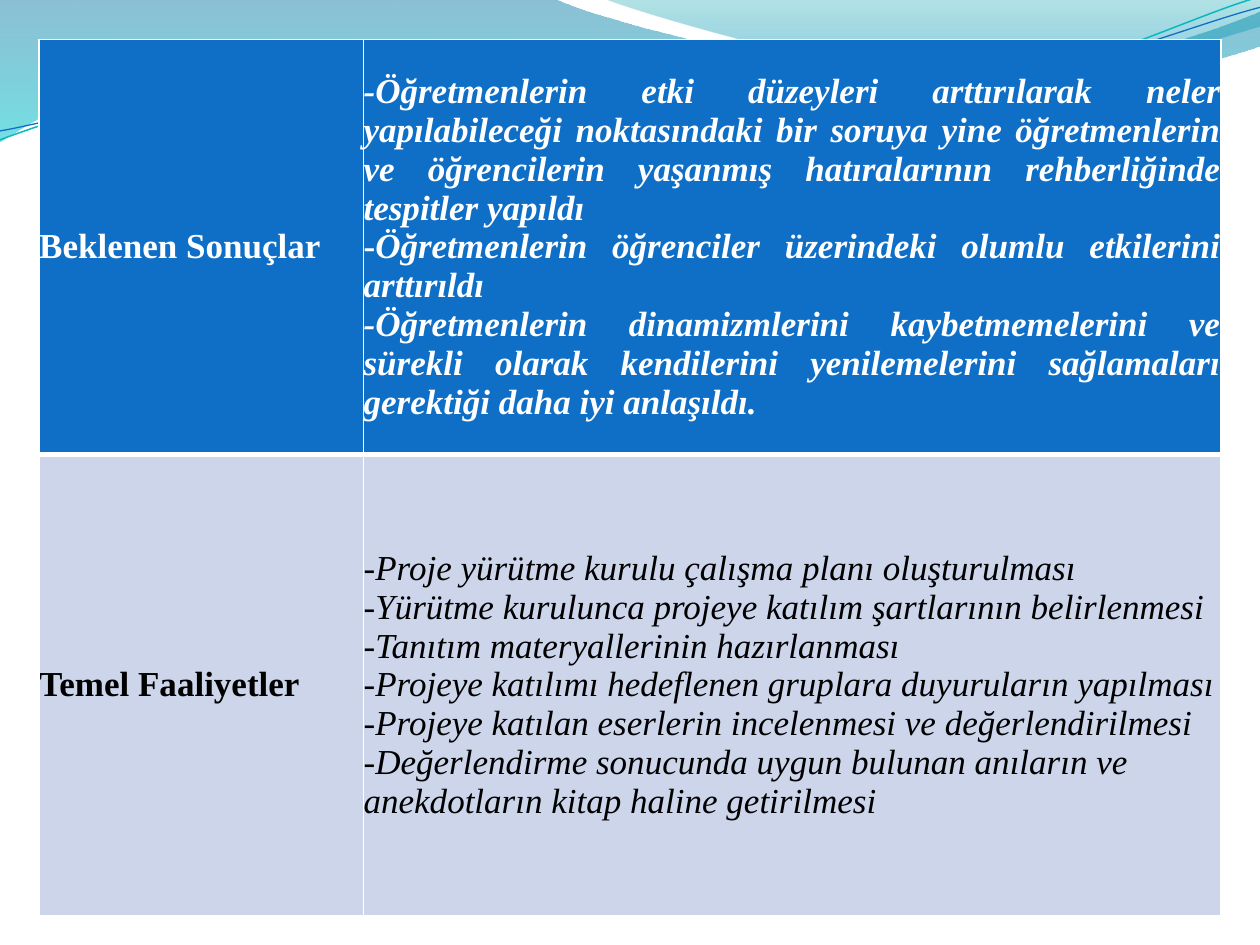
"""Builds the slide with the project's expected results and core activities."""
from dataclasses import dataclass

from lxml import etree
from pptx import Presentation
from pptx import util as u
from pptx.dml.color import RGBColor
from pptx.enum import text
from pptx.oxml import ns


@dataclass(frozen=True)
class Theme:
    font: str = "Times New Roman"
    size: int = 20
    white: str = "FFFFFF"
    black: str = "000000"
    blue: str = "0F6FC6"
    pale: str = "CCD5EA"
    teal: str = "0AB8BF"
    wide_wave: tuple = ((0, "0074A1", 45), (100, "00C6CF", 55))
    short_wave: tuple = ((0, "00A1A9", 30), (80, "008BBF", 45))
    thin: int = 1
    thick: int = 3


THEME = Theme()

WIDE_WAVE = [
    (0, 0), (11.18, -0.03),
    (12.09, 0.43, 16.87, 1.6, 19.25, 1.6),
    (21.67, 1.6, 24.33, 0.66, 25.4, 0.23),
    (25.43, 0.91),
    (24.97, 1.12, 22.1, 1.93, 18.95, 1.91),
    (15.8, 1.91, 9.7, 0.71, 6.53, 0.86),
    (3.28, 0.91, 1.17, 2.11, -0.03, 2.87),
    (0, 0),
]
SHORT_WAVE = [
    (12.17, -0.03),
    (12.93, 0.28, 17.32, 1.57, 19.53, 1.65),
    (21.74, 1.75, 24.41, 0.81, 25.4, 0.53),
    (25.4, 0),
    (12.17, -0.03),
]
TEAL_STROKE = [
    (0, 2.82),
    (1.22, 2.36, 4.01, 1.45, 7.04, 1.32),
    (10.03, 1.19, 15.06, 2.26, 18.11, 2.03),
    (21.16, 1.8, 23.83, 0.38, 25.35, -0.05),
]
BLUE_STROKE = [
    (0, 2.64),
    (1.19, 2.44, 4.17, 1.55, 7.19, 1.42),
    (10.24, 1.3, 15.16, 2.13, 18.21, 1.91),
    (21.23, 1.7, 23.9, 0.53, 25.4, 0.15),
]

RESULTS = [
    ["-Öğretmenlerin etki düzeyleri arttırılarak neler yapılabileceği noktasındaki "
     "bir soruya yine öğretmenlerin ve öğrencilerin yaşanmış hatıralarının "
     "rehberliğinde tespitler yapıldı"],
    ["-", "Öğretmenlerin öğrenciler üzerindeki olumlu etkilerini arttırıldı"],
    ["-Öğretmenlerin dinamizmlerini kaybetmemelerini ve sürekli olarak kendilerini "
     "yenilemelerini sağlamaları gerektiği daha iyi anlaşıldı."],
]
ACTIVITIES = [
    ["-Proje yürütme kurulu çalışma planı oluşturulması"],
    ["-Yürütme kurulunca projeye katılım şartlarının belirlenmesi"],
    ["-Tanıtım materyallerinin hazırlanması"],
    ["-Projeye katılımı hedeflenen gruplara duyuruların yapılması"],
    ["-Projeye katılan eserlerin incelenmesi ve değerlendirilmesi"],
    ["-Değerlendirme sonucunda uygun bulunan anıların ve anekdotların kitap "
     "haline getirilmesi"],
]


def apply(target, values):
    """Set every attribute named in values on target."""
    for name, value in values.items():
        setattr(target, name, value)


def bend(shape, outline):
    """Merge each three segments that describe a curve into one cubic curve."""
    segments = iter(list(shape._element.iter(ns.qn("a:lnTo"))))
    for piece in outline[1:]:
        first = next(segments)
        if len(piece) == 2:
            continue
        first.tag = ns.qn("a:cubicBezTo")
        for _ in range(2):
            segment = next(segments)
            first.append(segment[0])
            segment.getparent().remove(segment)


def add_outline(slide, outline, close):
    """Add a curved freeform, given in centimetres, without shadow."""
    points = [(u.Cm(piece[i]), u.Cm(piece[i + 1]))
              for piece in outline for i in range(0, len(piece), 2)]
    builder = slide.shapes.build_freeform(*points[0])
    builder.add_line_segments(points[1:], close=close)
    shape = builder.convert_to_shape()
    bend(shape, outline)
    shape.shadow.inherit = False
    return shape


def add_wave(slide, outline, stops):
    """Add a wave with a translucent gradient running downwards."""
    wave = add_outline(slide, outline, True)
    wave.line.fill.background()
    wave.fill.gradient()
    wave.fill.gradient_angle = 270
    for stop, (position, color, _) in zip(wave.fill.gradient_stops, stops):
        stop.position = position / 100
        stop.color.rgb = RGBColor.from_string(color)
    tints = wave._element.spPr.iter(ns.qn("a:srgbClr"))
    for tint, (_, _, opacity) in zip(tints, stops):
        etree.SubElement(tint, ns.qn("a:alpha"), val=str(opacity * 1000))


def add_stroke(slide, outline, color, width):
    """Add an open curved stroke."""
    stroke = add_outline(slide, outline, False)
    stroke.fill.background()
    stroke.line.color.rgb = RGBColor.from_string(color)
    stroke.line.width = u.Pt(width)


def set_borders(cell, widths):
    """Draw white cell borders with the given widths by side."""
    properties = cell._tc.get_or_add_tcPr()
    for side, width in widths.items():
        border = etree.SubElement(properties, ns.qn(f"a:ln{side}"), w=str(u.Pt(width)))
        paint = etree.SubElement(border, ns.qn("a:solidFill"))
        etree.SubElement(paint, ns.qn("a:srgbClr"), val=THEME.white)


def fill_cell(cell, paragraphs, align, color, bold, italic):
    """Write the paragraphs of a cell; a lone dash stays upright."""
    apply(cell, {"margin_left": 0, "margin_right": 0, "margin_top": 0,
                 "margin_bottom": 0, "vertical_anchor": text.MSO_ANCHOR.MIDDLE})
    frame = cell.text_frame
    for index, pieces in enumerate(paragraphs):
        paragraph = frame.add_paragraph() if index else frame.paragraphs[0]
        paragraph.alignment = align
        for piece in pieces:
            run = paragraph.add_run()
            run.text = piece
            apply(run.font, {"name": THEME.font, "size": u.Pt(THEME.size),
                             "bold": bold, "italic": italic and piece != "-"})
            run.font.color.rgb = RGBColor.from_string(color)


def add_project_table(slide):
    """Add the table of results and activities."""
    widths, heights = (6.54, 17.28), (8.36, 9.3)
    table = slide.shapes.add_table(
        2, 2, u.Cm(0.79), u.Cm(0.8), u.Cm(sum(widths)), u.Cm(sum(heights))).table
    for column, width in zip(table.columns, widths):
        column.width = u.Cm(width)
    for row, height in zip(table.rows, heights):
        row.height = u.Cm(height)
    justify, left = text.PP_ALIGN.JUSTIFY, text.PP_ALIGN.LEFT
    sections = [
        ("Beklenen Sonuçlar", RESULTS, justify, THEME.white, True, THEME.blue,
         THEME.thick),
        ("Temel Faaliyetler", ACTIVITIES, left, THEME.black, False, THEME.pale,
         THEME.thin),
    ]
    for row, section in enumerate(sections):
        heading, details, align, color, bold, background, bottom = section
        label, content = table.cell(row, 0), table.cell(row, 1)
        fill_cell(label, [[heading]], justify, color, True, False)
        fill_cell(content, details, align, color, bold, True)
        for cell in (label, content):
            set_borders(cell, {**dict.fromkeys("LRT", THEME.thin), "B": bottom})
            cell.fill.solid()
            cell.fill.fore_color.rgb = RGBColor.from_string(background)


def main():
    """Build and save the slide."""
    deck = Presentation()
    apply(deck, {"slide_width": u.Cm(25.4), "slide_height": u.Cm(19.05)})
    slide = deck.slides.add_slide(deck.slide_layouts[6])
    add_wave(slide, WIDE_WAVE, THEME.wide_wave)
    add_wave(slide, SHORT_WAVE, THEME.short_wave)
    add_stroke(slide, TEAL_STROKE, THEME.teal, 0.85)
    add_stroke(slide, BLUE_STROKE, THEME.blue, 0.75)
    add_project_table(slide)
    deck.save("out.pptx")


if __name__ == "__main__":
    main()
